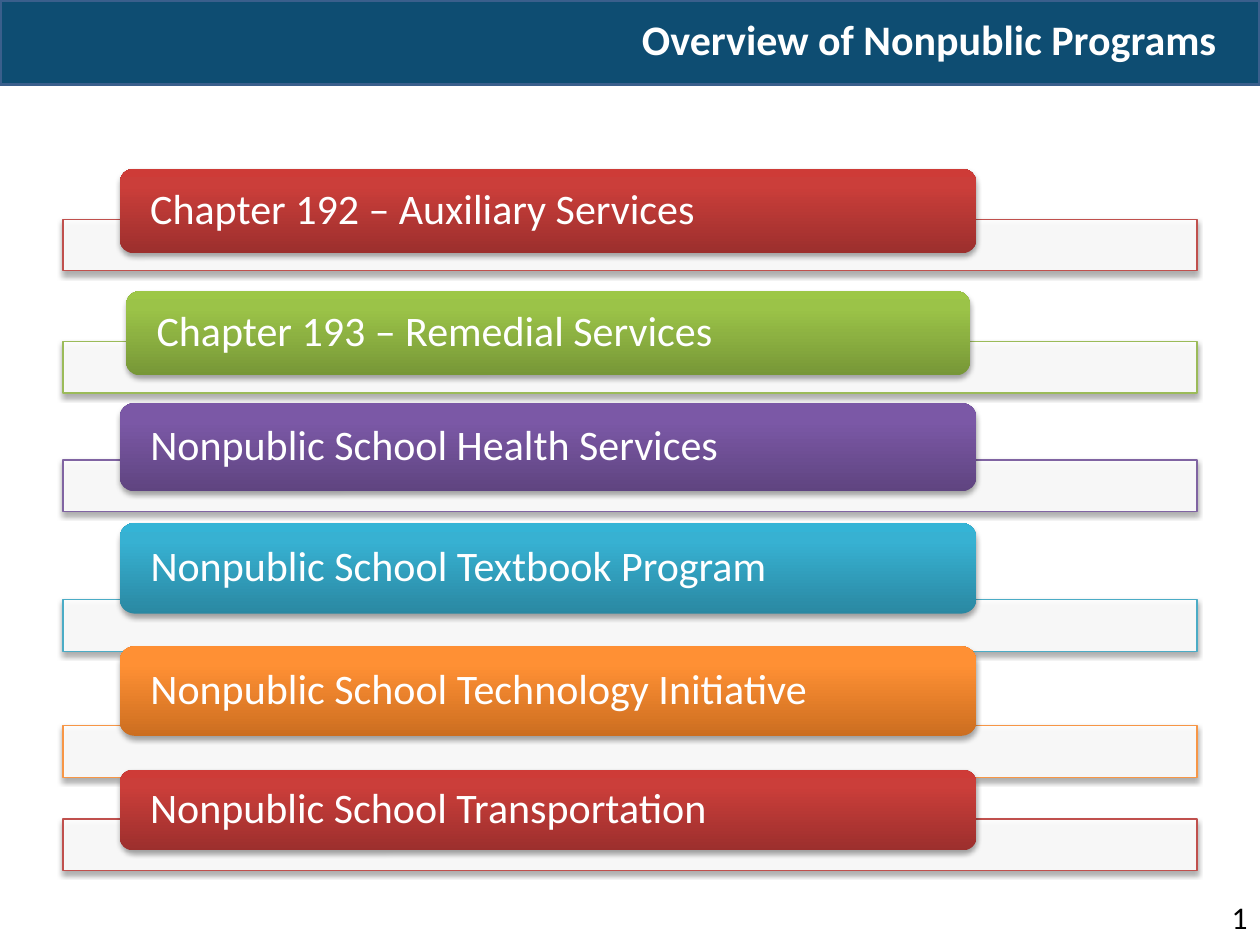
"""Build the slide that lists the nonpublic school programs."""
from copy import deepcopy

from pptx import Presentation
from pptx.dml.color import RGBColor
from pptx.enum.shapes import MSO_SHAPE
from pptx.enum.text import MSO_ANCHOR, PP_ALIGN
from pptx.oxml import parse_xml
from pptx.oxml.ns import nsdecls, qn
from pptx.util import Inches, Pt

COLS, ROWS = 100, 75
FONT = "Calibri"
WHITE = RGBColor(0xFF, 0xFF, 0xFF)
BLACK = RGBColor(0x00, 0x00, 0x00)
NAVY = RGBColor(0x0E, 0x4D, 0x72)
NAVY_EDGE = RGBColor(0x3A, 0x5F, 0x8C)
RED = [RGBColor.from_string(c) for c in ("C0504D", "9C2F2D", "CB3E3A", "CE3B37")]
GREEN = [RGBColor.from_string(c) for c in ("9BBB59", "779737", "9BC348", "9DC746")]
PURPLE = [RGBColor.from_string(c) for c in ("8064A2", "5F4480", "7B58A6", "7C57A8")]
TEAL = [RGBColor.from_string(c) for c in ("4BACC6", "2A88A2", "37B1D2", "34B4D6")]
ORANGE = [RGBColor.from_string(c) for c in ("F79646", "CC6E20", "FF9034", "FF9136")]

PROGRAMS = [
    ("Chapter 192 – Auxiliary Services", RED, 17.4, (9.5, 13.4, 68, 6.7)),
    ("Chapter 193 – Remedial Services", GREEN, 27.1, (10, 23.1, 67, 6.7)),
    ("Nonpublic School Health Services", PURPLE, 36.5, (9.5, 32, 68, 7)),
    ("Nonpublic School Textbook Program", TEAL, 47.6, (9.5, 41.5, 68, 7.2)),
    ("Nonpublic School Technology Initiative", ORANGE, 57.6, (9.5, 51.3, 68, 7.1)),
    ("Nonpublic School Transportation", RED, 65, (9.5, 61.1, 68, 6.4)),
]


def format_font(font, size=24, color=WHITE, bold=False):
    """Apply the deck's typeface to a font."""
    font.name, font.size, font.bold = FONT, Pt(size), bold
    font.color.rgb = color


def write(tf, text, align=PP_ALIGN.LEFT, spacing=None, **fmt):
    """Put one formatted, vertically centred paragraph in a text frame."""
    tf.word_wrap = True
    tf.vertical_anchor = MSO_ANCHOR.MIDDLE
    p = tf.paragraphs[0]
    p.alignment, p.line_spacing = align, spacing
    r = p.add_run()
    r.text = text
    format_font(r.font, **fmt)
    return r


class Deck:
    """Hold the presentation, the current slide and its grid."""

    def __init__(self):
        """Open a title-only slide of 10 by 7.5 inches."""
        self.prs = Presentation()
        self.prs.slide_width, self.prs.slide_height = Inches(10), Inches(7.5)
        self.slide = self.prs.slides.add_slide(self.prs.slide_layouts[5])

    def place(self, col, row, cols, rows):
        """Turn grid cells into lengths."""
        dx, dy = self.prs.slide_width / COLS, self.prs.slide_height / ROWS
        return [round(v) for v in (col * dx, row * dy, cols * dx, rows * dy)]

    def shape(self, kind, at, fill=None, line=None, width=0.75, shadow=False):
        """Add a preset shape with its fill, outline and optional shadow."""
        sp = self.slide.shapes.add_shape(kind, *self.place(*at))
        sp.shadow.inherit = False
        if fill is not None:
            sp.fill.solid()
            sp.fill.fore_color.rgb = fill
        if line is None:
            sp.line.fill.background()
        else:
            sp.line.color.rgb, sp.line.width = line, Pt(width)
        if shadow:
            sp._element.spPr.find(qn("a:effectLst")).append(parse_xml(
                f'<a:outerShdw {nsdecls("a")} blurRad="{Pt(3.1)}" dist="{Pt(1.8)}"'
                ' dir="5400000" rotWithShape="0"><a:srgbClr val="000000">'
                '<a:alpha val="35000"/></a:srgbClr></a:outerShdw>'))
        return sp

    def title(self, text, at):
        """Move the title placeholder in front of the bar and fill it."""
        sp = self.slide.shapes.title
        sp.left, sp.top, sp.width, sp.height = self.place(*at)
        self.slide.shapes._spTree.append(sp._element)
        write(sp.text_frame, text, PP_ALIGN.CENTER, bold=True)

    def number(self, text, at):
        """Add the slide number as a field."""
        sp = self.slide.shapes.add_textbox(*self.place(*at))
        r = write(sp.text_frame, text, PP_ALIGN.RIGHT, size=18, color=BLACK)
        fld = parse_xml(f'<a:fld {nsdecls("a")} type="slidenum"'
                        ' id="{B6F15528-21DE-4FAA-801E-634DDDAF4B2B}"/>')
        r._r.addprevious(fld)
        fld.extend(list(r._r))
        r._r.getparent().remove(r._r)

    def track(self, color, row):
        """Add the wide, slightly transparent strip behind a label."""
        sp = self.shape(MSO_SHAPE.RECTANGLE, (5, row, 90, 4.1), WHITE, color, shadow=True)
        clr = sp._element.spPr.find(f"{qn('a:solidFill')}/{qn('a:srgbClr')}")
        clr.append(parse_xml(f'<a:alpha {nsdecls("a")} val="90000"/>'))

    def label(self, text, colors, at):
        """Add a rounded label with a vertical three-stop gradient."""
        sp = self.shape(MSO_SHAPE.ROUNDED_RECTANGLE, at, shadow=True)
        sp.fill.gradient()
        sp.fill.gradient_angle = 90
        stops = sp._element.spPr.find(f".//{qn('a:gsLst')}")
        stops.append(deepcopy(stops[-1]))
        for stop, color, position in zip(sp.fill.gradient_stops, colors, (0, 0.8, 1)):
            stop.color.rgb, stop.position = color, position
        tf = sp.text_frame
        tf.margin_left = tf.margin_right = Inches(0.21)
        tf.margin_top = tf.margin_bottom = 0
        write(tf, text, spacing=0.9)


def main():
    """Draw the slide and save it."""
    deck = Deck()
    deck.shape(MSO_SHAPE.RECTANGLE, (0, 0, COLS, 6.7), NAVY, NAVY_EDGE, width=2)
    deck.number("3", (93.3, 70.8, 6.7, 4))
    deck.title("Overview of Nonpublic Programs", (47.5, 0, 52.5, 6.2))
    for text, (edge, *gradient), row, at in PROGRAMS:
        deck.track(edge, row)
        deck.label(text, gradient, at)
    deck.prs.save("out.pptx")


if __name__ == "__main__":
    main()
